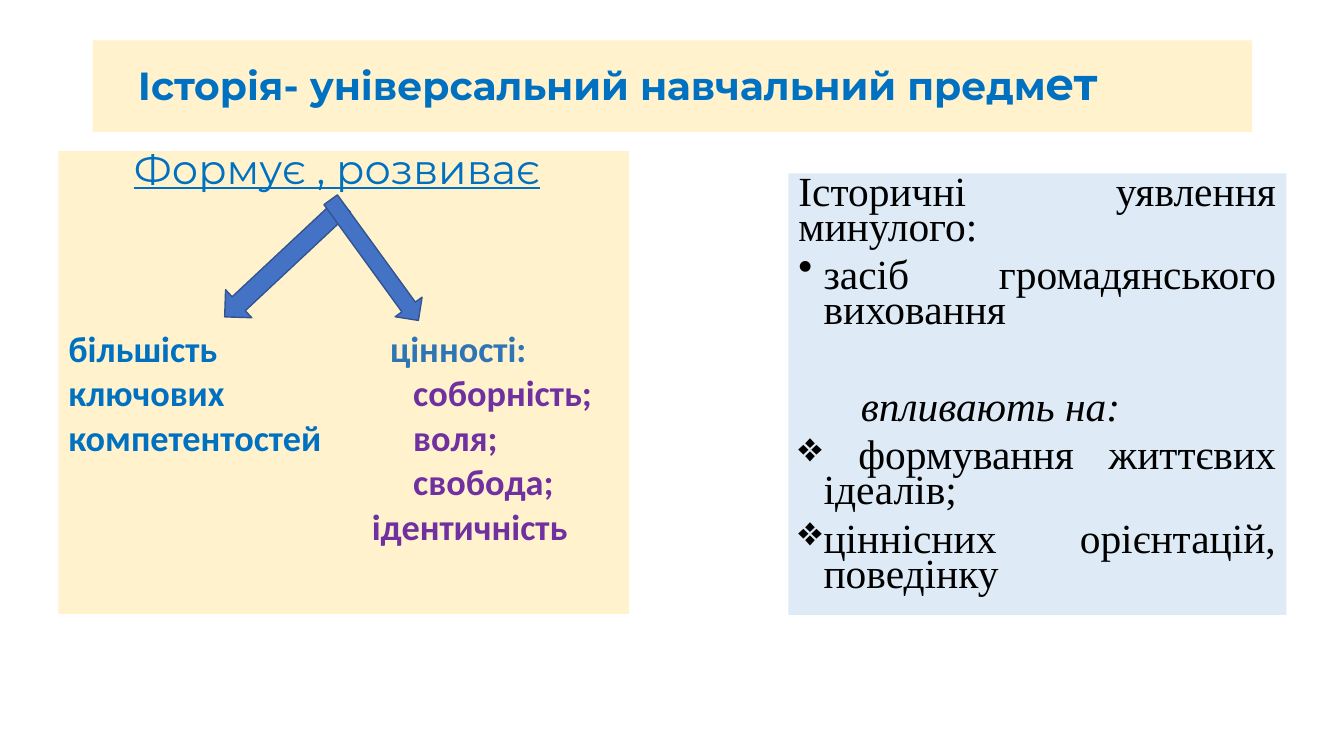
from lxml.etree import SubElement
from pptx import Presentation
from pptx.dml.color import RGBColor
from pptx.enum.shapes import MSO_SHAPE as SHAPE
from pptx.enum.text import MSO_ANCHOR as ANCHOR, PP_ALIGN as ALIGN
from pptx.oxml.ns import qn
from pptx.util import Inches, Pt

BLUE, PALE_BLUE, PURPLE, BLACK = "0070C0", "2E75B6", "7030A0", "000000"


def paint(color, value):
    color.rgb = RGBColor.from_string(value)


def add_panel(left, top, width, height, color):
    panel = slide.shapes.add_textbox(Inches(left), Inches(top), Inches(width), Inches(height))
    panel.fill.solid()
    paint(panel.fill.fore_color, color)
    panel.text_frame.word_wrap = True
    return panel.text_frame


deck = Presentation()
deck.slide_width, deck.slide_height = Inches(13.33), Inches(7.5)
slide = deck.slides.add_slide(deck.slide_layouts[6])

title = add_panel(0.92, 0.4, 11.5, 0.91, "FFF2CC")
title.vertical_anchor = ANCHOR.MIDDLE
skills = add_panel(0.58, 1.5, 5.66, 4.59, "FFF2CC")
ideas = add_panel(7.82, 1.72, 4.94, 4.38, "DEEBF7")

title_line = title.paragraphs[0]
title_line.line_spacing = 0.9
title_line._p.get_or_add_pPr().set("marL", str(Inches(0.35)))
for words, size in [("Історія- універсальний навчальний предм", 28), ("ет", 32)]:
    run = title_line.add_run()
    run.text = words
    run.font.name, run.font.size, run.font.bold = "Montserrat", Pt(size), True
    paint(run.font.color, BLUE)

skill_lines = [
    (0.65, None, 10, [("Формує , розвиває", BLUE)]),
    (0, 3.19, 105, [("більшість", BLUE), ("\tцінності:", PALE_BLUE)]),
    (0, 3.42, 10, [("ключових", BLUE), ("\tсоборність;", PURPLE)]),
    (0, 3.42, 10, [("компетентостей", BLUE), ("\tволя;", PURPLE)]),
    (3.42, None, 10, [("свобода;", PURPLE)]),
    (3.01, None, 10, [("ідентичність", PURPLE)]),
]
for row, (indent, tab, gap, parts) in enumerate(skill_lines):
    line = skills.add_paragraph() if row else skills.paragraphs[0]
    line.line_spacing, line.space_before = 0.7, Pt(gap)
    props = line._p.get_or_add_pPr()
    props.set("marL", str(Inches(indent)))
    if tab:
        tabs = SubElement(props, qn("a:tabLst"))
        SubElement(tabs, qn("a:tab"), pos=str(Inches(tab)), algn="l")
    for words, color in parts:
        run = line.add_run()
        run.text = words
        run.font.name, run.font.size = ("Calibri", Pt(25.9)) if row else ("Montserrat", Pt(29.6))
        run.font.bold, run.font.underline = row > 0, row == 0
        paint(run.font.color, color)

idea_lines = [
    ("Історичні уявлення минулого:", None, 0, 10),
    ("засіб громадянського виховання", "•", 0.25, 10),
    ("впливають на:", None, 0.62, 44),
    (" формування життєвих ідеалів;", "❖", 0.25, 10),
    ("ціннісних орієнтацій, поведінку", "❖", 0.25, 10),
]
ideas.text = "\n".join(words for words, *_ in idea_lines)
for line, (words, bullet, indent, gap) in zip(ideas.paragraphs, idea_lines):
    line.alignment = ALIGN.JUSTIFY
    line.line_spacing, line.space_before = 0.7, Pt(gap)
    props = line._p.get_or_add_pPr()
    props.set("marL", str(Inches(indent)))
    if bullet:
        props.set("indent", str(Inches(-indent)))
        SubElement(props, qn("a:buChar"), char=bullet)
    font = line.runs[0].font
    font.name, font.size = "Times New Roman", Pt(29.6)
    font.italic = words == "впливають на:"
    paint(font.color, BLACK)

for kind, left, top, width, height, angle in [
    (SHAPE.RIGHT_ARROW, 2.01, 2.4, 1.62, 0.38, 136.9),
    (SHAPE.DOWN_ARROW, 3.55, 1.84, 0.33, 1.48, 324),
]:
    arrow = slide.shapes.add_shape(kind, Inches(left), Inches(top), Inches(width), Inches(height))
    arrow.rotation = angle
    arrow.shadow.inherit = False
    arrow.fill.solid()
    paint(arrow.fill.fore_color, "4472C4")
    paint(arrow.line.color, "325491")
    arrow.line.width = Pt(1)

deck.save("out.pptx")
